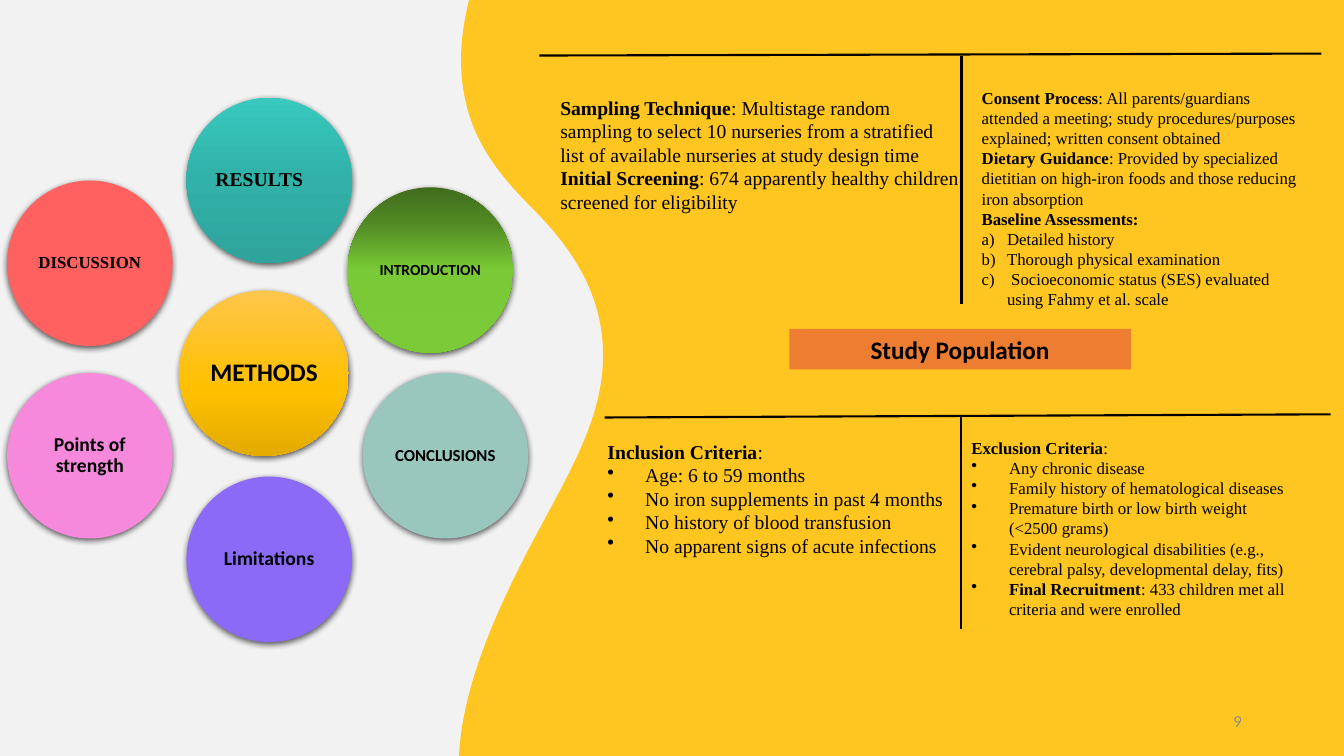
import dataclasses

import pptx
import pptx.dml.color
import pptx.enum.shapes
import pptx.enum.text
import pptx.oxml
import pptx.oxml.ns
import pptx.util
from pptx.util import Cm

ALIGN = pptx.enum.text.PP_ALIGN
ANCHOR = pptx.enum.text.MSO_ANCHOR
SHAPE = pptx.enum.shapes.MSO_SHAPE
NS = pptx.oxml.ns.nsdecls("a")


@dataclasses.dataclass(frozen=True)
class Theme:
    back: str = "F2F2F2"
    wave: str = "FFC621"
    band: str = "ED7D31"
    ink: str = "000000"
    grey: str = "8C8C8C"
    coral: str = "FF6060"
    sage: str = "99C7BD"
    violet: str = "8B6AF7"
    pink: str = "F689DC"
    gold: tuple = ((0, "FFC64B"), (60, "FFC000"), (100, "E3AB00"))
    green: tuple = ((0, "416D1D"), (21, "518824"), (50, "79CA36"), (100, "7BCB39"))
    teal: tuple = ((0, "38C8BE"), (50, "31B1A8"), (100, "2EA49C"))
    sans: str = "Calibri"
    serif: str = "Times New Roman"
    head: int = 18
    body: int = 14
    small: int = 12
    tiny: int = 11
    rule: float = 1.5


T = Theme()

START = (11.82, 0)
CURVES = [
    ((11.7, 0.5), (11.62, 1), (11.62, 1.51)),
    ((11.62, 3.28), (12.5, 4.33), (13.41, 5.24)),
    ((14.31, 6.15), (15.2, 7.31), (15.2, 8.95)),
    ((15.2, 10.58), (14.31, 11.97), (13.38, 13.73)),
    ((12.45, 15.5), (11.64, 17.39), (11.57, 19.05)),
]

DISCS = [
    ("DISCUSSION", 0.18, 4.55, T.coral, T.serif, T.small),
    ("METHODS", 4.52, 7.32, T.gold, T.sans, T.head),
    ("CONCLUSIONS", 9.14, 9.4, T.sage, T.sans, T.small),
    ("Limitations", 4.7, 12.01, T.violet, T.sans, T.body),
    ("Points of strength", 0.18, 9.4, T.pink, T.sans, T.body),
    ("INTRODUCTION", 8.76, 4.72, T.green, T.sans, T.tiny),
    ("RESULTS", 4.7, 2.46, T.teal, T.serif, T.body),
]

RULES = [
    (24.23, 1.42, 24.23, 7.67),
    (13.59, 1.4, 33.3, 1.35),
    (24.21, 10.52, 24.21, 15.85),
    (15.24, 10.52, 33.53, 10.44),
]

MARKS = {
    "dot": (0.95, '<a:buChar %s char="•"/>'),
    "abc": (0.64, '<a:buAutoNum %s type="alphaLcParenR"/>'),
}

SAMPLE = [
    ("", "Sampling Technique", ": Multistage random sampling to select 10 nurseries "
     "from a stratified list of available nurseries at study design time"),
    ("", "Initial Screening", ": 674 apparently healthy children screened for eligibility"),
]
CONSENT = [
    ("", "Consent Process", ": All parents/guardians attended a meeting; "
     "study procedures/purposes explained; written consent obtained"),
    ("", "Dietary Guidance", ": Provided by specialized dietitian on high-iron foods "
     "and those reducing iron absorption"),
    ("", "Baseline Assessments:", ""),
    ("abc", "", "Detailed history"),
    ("abc", "", "Thorough physical examination"),
    ("abc", "", " Socioeconomic status (SES) evaluated using Fahmy et al. scale"),
]
INCLUDE = [
    ("", "Inclusion Criteria", ":"),
    ("dot", "", "Age: 6 to 59 months"),
    ("dot", "", "No iron supplements in past 4 months"),
    ("dot", "", "No history of blood transfusion"),
    ("dot", "", "No apparent signs of acute infections"),
]
EXCLUDE = [
    ("", "Exclusion Criteria", ":"),
    ("dot", "", "Any chronic disease"),
    ("dot", "", "Family history of hematological diseases"),
    ("dot", "", "Premature birth or low birth weight (<2500 grams)"),
    ("dot", "", "Evident neurological disabilities (e.g., cerebral palsy, "
     "developmental delay, fits)"),
    ("dot", "Final Recruitment", ": 433 children met all criteria and were enrolled"),
]


def rgb(code):
    return pptx.dml.color.RGBColor.from_string(code)


def paint(fill, code):
    fill.solid()
    fill.fore_color.rgb = rgb(code)


def shade(shape, stops):
    shape.fill.gradient()
    shape.fill.gradient_angle = 270
    group = shape._element.spPr.find(".//" + pptx.oxml.ns.qn("a:gsLst"))
    group.clear()
    for place, code in stops:
        group.append(pptx.oxml.parse_xml(
            f'<a:gs {NS} pos="{place * 1000}"><a:srgbClr val="{code}"/></a:gs>'))


def add_run(para, text, size, face, bold=False, code=T.ink):
    run = para.add_run()
    run.text = text
    run.font.size = pptx.util.Pt(size)
    run.font.name = face
    run.font.bold = bold
    run.font.color.rgb = rgb(code)


def pad(frame, size):
    frame.margin_left = frame.margin_right = Cm(size)
    frame.margin_top = frame.margin_bottom = Cm(size)


def add_wave(slide):
    points = []
    first = START
    for curve in CURVES:
        for step in range(1, 21):
            t = step / 20
            u = 1 - t
            parts = (u ** 3, 3 * u * u * t, 3 * u * t * t, t ** 3)
            points.append(tuple(sum(k * p[axis] for k, p in zip(parts, (first, *curve)))
                                for axis in (0, 1)))
        first = curve[-1]
    points += [(33.87, 19.05), (33.87, 0)]
    outline = slide.shapes.build_freeform(Cm(START[0]), Cm(START[1]))
    outline.add_line_segments([(Cm(x), Cm(y)) for x, y in points])
    wave = outline.convert_to_shape()
    wave.shadow.inherit = False
    paint(wave.fill, T.wave)
    wave.line.fill.background()


def add_disc(slide, text, x, y, tone, face, size):
    wide = 4.27 if text == "METHODS" else 4.17
    disc = slide.shapes.add_shape(SHAPE.OVAL, Cm(x), Cm(y), Cm(wide), Cm(4.17))
    if isinstance(tone, str):
        paint(disc.fill, tone)
    else:
        shade(disc, tone)
    disc.line.fill.background()
    disc._element.spPr.append(pptx.oxml.parse_xml(
        f'<a:effectLst {NS}><a:outerShdw blurRad="57150" dist="19050" dir="5400000" '
        f'algn="ctr" rotWithShape="0"><a:srgbClr val="{T.ink}"><a:alpha val="63000"/>'
        '</a:srgbClr></a:outerShdw></a:effectLst>'))
    frame = disc.text_frame
    frame.word_wrap = True
    frame.vertical_anchor = ANCHOR.MIDDLE
    pad(frame, 0.12)
    para = frame.paragraphs[0]
    para.alignment = ALIGN.LEFT if text == "RESULTS" else ALIGN.CENTER
    para.line_spacing = 0.9
    add_run(para, text, size, face, True)


def add_rule(slide, *ends):
    kind = pptx.enum.shapes.MSO_CONNECTOR.STRAIGHT
    rule = slide.shapes.add_connector(kind, *(Cm(end) for end in ends))
    rule.line.color.rgb = rgb(T.ink)
    rule.line.width = pptx.util.Pt(T.rule)
    rule._element.spPr.append(pptx.oxml.parse_xml(f"<a:effectLst {NS}/>"))


def add_box(slide, x, y, wide, high):
    frame = slide.shapes.add_textbox(Cm(x), Cm(y), Cm(wide), Cm(high)).text_frame
    frame.word_wrap = True
    return frame


def add_note(slide, spot, size, lines):
    frame = add_box(slide, *spot)
    for i, (mark, lead, rest) in enumerate(lines):
        para = frame.add_paragraph() if i else frame.paragraphs[0]
        if mark:
            indent, xml = MARKS[mark]
            props = para._p.get_or_add_pPr()
            props.set("marL", str(Cm(indent)))
            props.set("indent", str(-Cm(indent)))
            props.append(pptx.oxml.parse_xml(xml % NS))
        for text, bold in ((lead, True), (rest, False)):
            if text:
                add_run(para, text, size, T.serif, bold)
    return frame


def set_title(slide, text):
    title = slide.shapes.title
    slide.shapes._spTree.append(title._element)
    title.left, title.top, title.width, title.height = Cm(19.89), Cm(8.29), Cm(8.61), Cm(1.02)
    paint(title.fill, T.band)
    title.text_frame.vertical_anchor = ANCHOR.MIDDLE
    para = title.text_frame.paragraphs[0]
    para.alignment = ALIGN.CENTER
    add_run(para, text, T.head, T.sans, True)


def add_page(slide, text):
    frame = add_box(slide, 23.93, 17.65, 7.62, 1.02)
    frame.vertical_anchor = ANCHOR.MIDDLE
    para = frame.paragraphs[0]
    para.alignment = ALIGN.RIGHT
    add_run(para, text, T.small, T.sans, code=T.grey)


def main():
    deck = pptx.Presentation()
    deck.slide_width, deck.slide_height = Cm(33.87), Cm(19.05)
    slide = deck.slides.add_slide(deck.slide_layouts[5])
    paint(slide.background.fill, T.back)
    add_wave(slide)
    for disc in DISCS:
        add_disc(slide, *disc)
    for ends in RULES:
        add_rule(slide, *ends)
    pad(add_note(slide, (14.12, 2.41, 10.08, 3), T.body, SAMPLE), 0)
    set_title(slide, "Study Population")
    add_note(slide, (15.06, 10.95, 9.14, 3.25), T.body, INCLUDE)
    add_note(slide, (24.23, 10.9, 8.66, 5.46), T.small, EXCLUDE)
    add_note(slide, (24.49, 2.08, 8.61, 5.89), T.small, CONSENT)
    add_page(slide, "9")
    deck.save("out.pptx")


if __name__ == "__main__":
    main()
